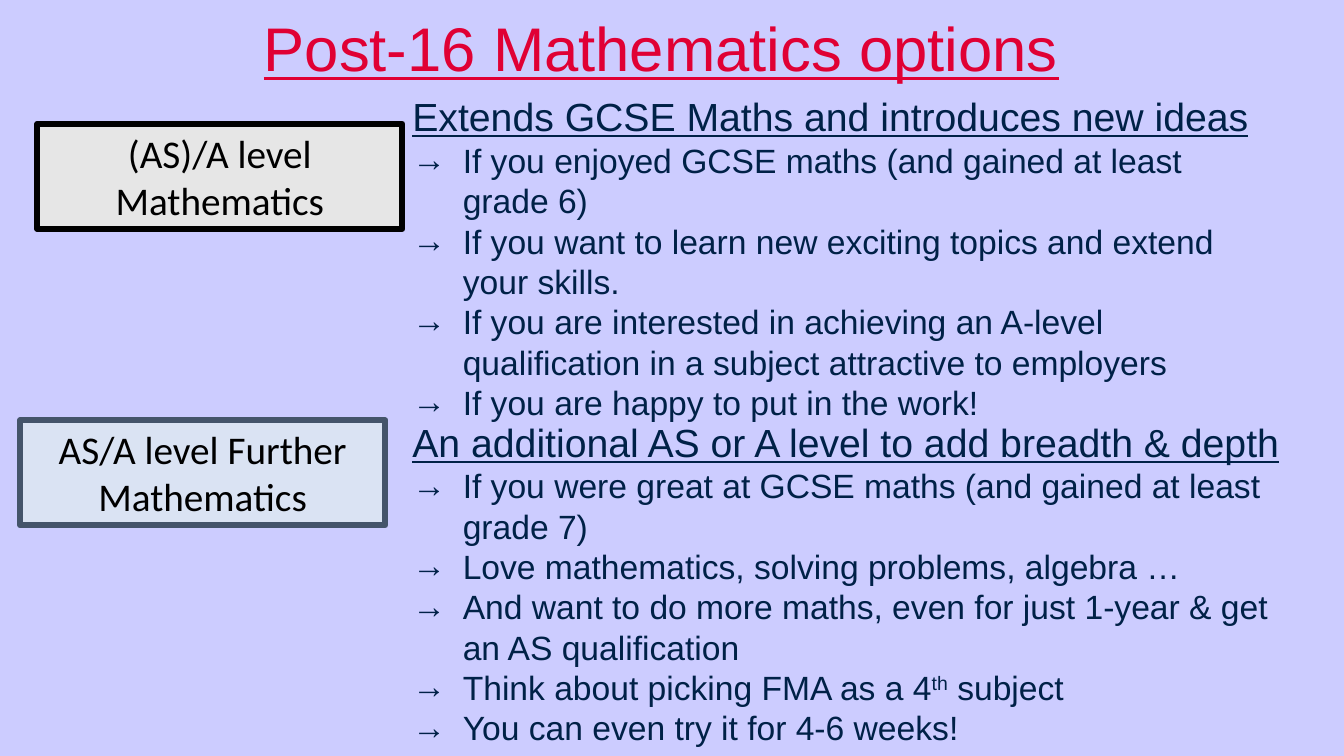
from lxml.etree import SubElement
from pptx import Presentation
from pptx.dml.color import RGBColor
from pptx.enum.shapes import MSO_SHAPE
from pptx.enum.text import MSO_ANCHOR, MSO_AUTO_SIZE, PP_ALIGN
from pptx.oxml.ns import qn
from pptx.util import Inches, Pt

LAVENDER = RGBColor(0xCC, 0xCC, 0xFF)
CRIMSON = RGBColor(0xE0, 0x00, 0x34)
NAVY = RGBColor(0x00, 0x21, 0x47)
BLACK = RGBColor(0x00, 0x00, 0x00)
GREY = RGBColor(0xE6, 0xE6, 0xE6)
PALE_BLUE = RGBColor(0xDA, 0xE3, 0xF3)
SLATE = RGBColor(0x44, 0x54, 0x6A)

REASONS_LEFT = 3.99
REASONS_HEIGHT = 3.4
COURSE_WIDTH, COURSE_HEIGHT = 3.62, 1.04
INDENT = Inches(0.5)


def place(part, left, top, width, height):
    part.left, part.top = Inches(left), Inches(top)
    part.width, part.height = Inches(width), Inches(height)


def add_run(paragraph, text, size, color, face="Arial", underline=False):
    run = paragraph.add_run()
    run.text = text
    run.font.name = face
    run.font.size = Pt(size)
    run.font.color.rgb = color
    run.font.underline = underline
    return run


deck = Presentation()
deck.slide_width, deck.slide_height = Inches(13.33), Inches(7.5)
slide = deck.slides.add_slide(deck.slide_layouts.get_by_name("Two Content"))
slide.background.fill.solid()
slide.background.fill.fore_color.rgb = LAVENDER

title = slide.shapes.title
place(title, 2.1, 0.09, 8.92, 0.85)
title.text_frame.auto_size = MSO_AUTO_SIZE.NONE
title.text_frame.vertical_anchor = MSO_ANCHOR.MIDDLE
heading = title.text_frame.paragraphs[0]
heading.alignment = PP_ALIGN.CENTER
heading.line_spacing = 0.9
add_run(heading, "Post-16 Mathematics options", 44, CRIMSON, underline=True)

courses = [
    ("(AS)/A level Mathematics", 0.37, 1.23, GREY, BLACK),
    ("AS/A level Further Mathematics", 0.2, 4.17, PALE_BLUE, SLATE),
]
for name, left, top, fill, border in courses:
    course = slide.shapes.add_shape(MSO_SHAPE.RECTANGLE, 0, 0, 0, 0)
    place(course, left, top, COURSE_WIDTH, COURSE_HEIGHT)
    course.shadow.inherit = False
    course.fill.solid()
    course.fill.fore_color.rgb = fill
    course.line.color.rgb = border
    course.line.width = Pt(4.5)
    course.text_frame.word_wrap = True
    course.text_frame.vertical_anchor = MSO_ANCHOR.TOP
    label = course.text_frame.paragraphs[0]
    label.alignment = PP_ALIGN.CENTER
    add_run(label, name, 28, BLACK, "Calibri")

reason_lists = [
    (1, 0.87, 8.66, "Extends GCSE Maths and introduces new ideas", [
        ["If you enjoyed GCSE maths (and gained at least grade 6)"],
        ["If you want to learn new exciting topics and extend your skills."],
        ["If you are interested in achieving an A-level qualification in a subject attractive to employers"],
        ["If you are happy to put in the work!"],
    ]),
    (2, 4.1, 9.14, "An additional AS or A level to add breadth & depth", [
        ["If you were great at GCSE maths (and gained at least grade 7)"],
        ["Love mathematics, solving problems, algebra …"],
        ["And want to do more maths, even for just 1-year & get an AS qualification"],
        ["Think about picking FMA as a 4", "th", " subject"],
        ["You can even try it for 4-6 weeks!"],
    ]),
]
for index, top, width, summary, reasons in reason_lists:
    body = slide.placeholders[index]
    place(body, REASONS_LEFT, top, width, REASONS_HEIGHT)
    frame = body.text_frame
    frame.auto_size = MSO_AUTO_SIZE.NONE
    frame.word_wrap = True
    lead = frame.paragraphs[0]
    lead.space_before = Pt(0)
    lead_props = lead._p.get_or_add_pPr()
    lead_props.set("marL", "0")
    lead_props.set("indent", "0")
    SubElement(lead_props, qn("a:buNone"))
    add_run(lead, summary, 28, NAVY, underline=True)
    for pieces in reasons:
        reason = frame.add_paragraph()
        reason.space_before = Pt(0)
        props = reason._p.get_or_add_pPr()
        props.set("marL", str(INDENT))
        props.set("indent", str(-INDENT))
        SubElement(props, qn("a:buFont"), typeface="Arial")
        SubElement(props, qn("a:buChar"), char="→")
        for piece in pieces:
            run = add_run(reason, piece, 24, NAVY)
            if piece == "th":
                run.font._element.set("baseline", "30000")

deck.save("out.pptx")
